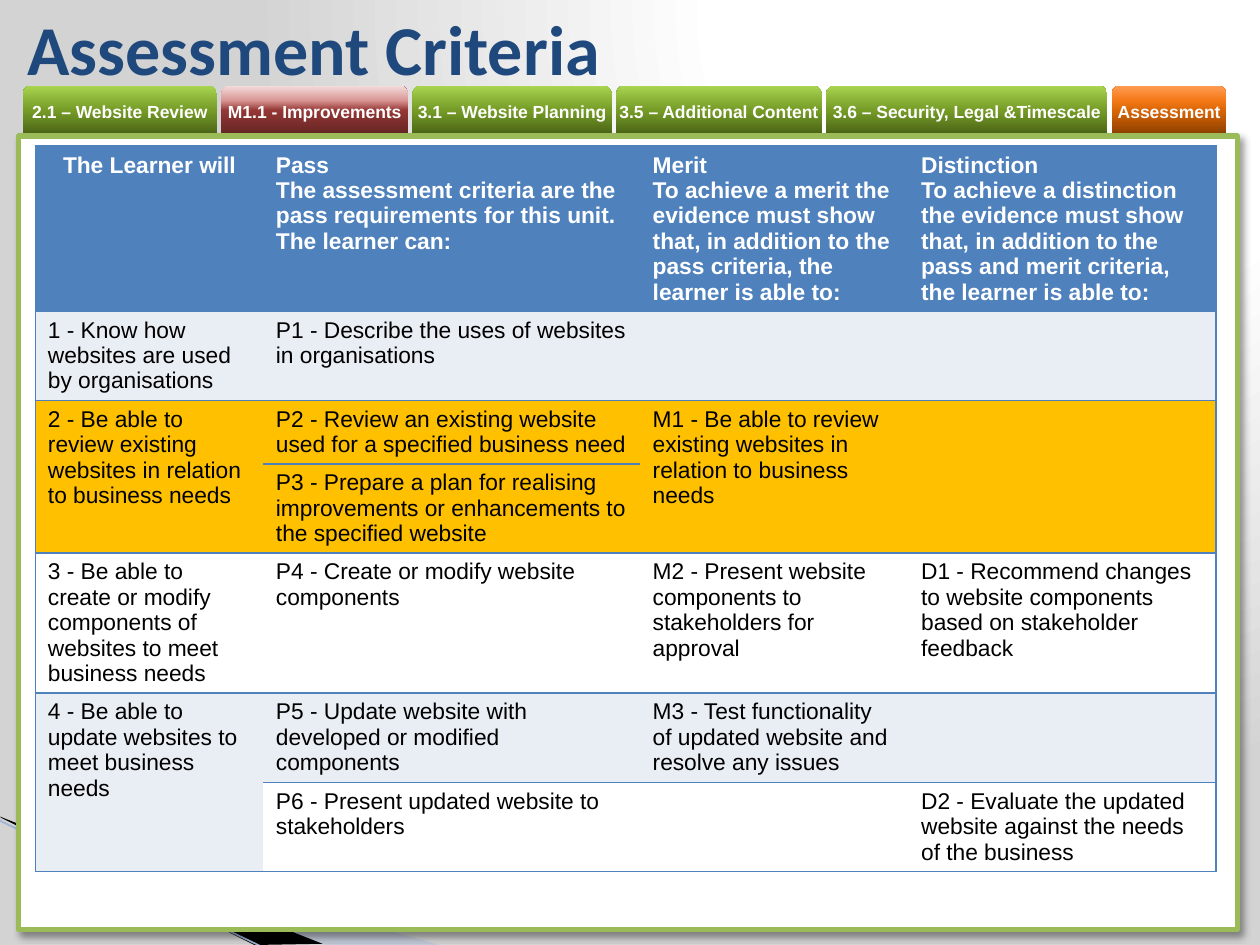
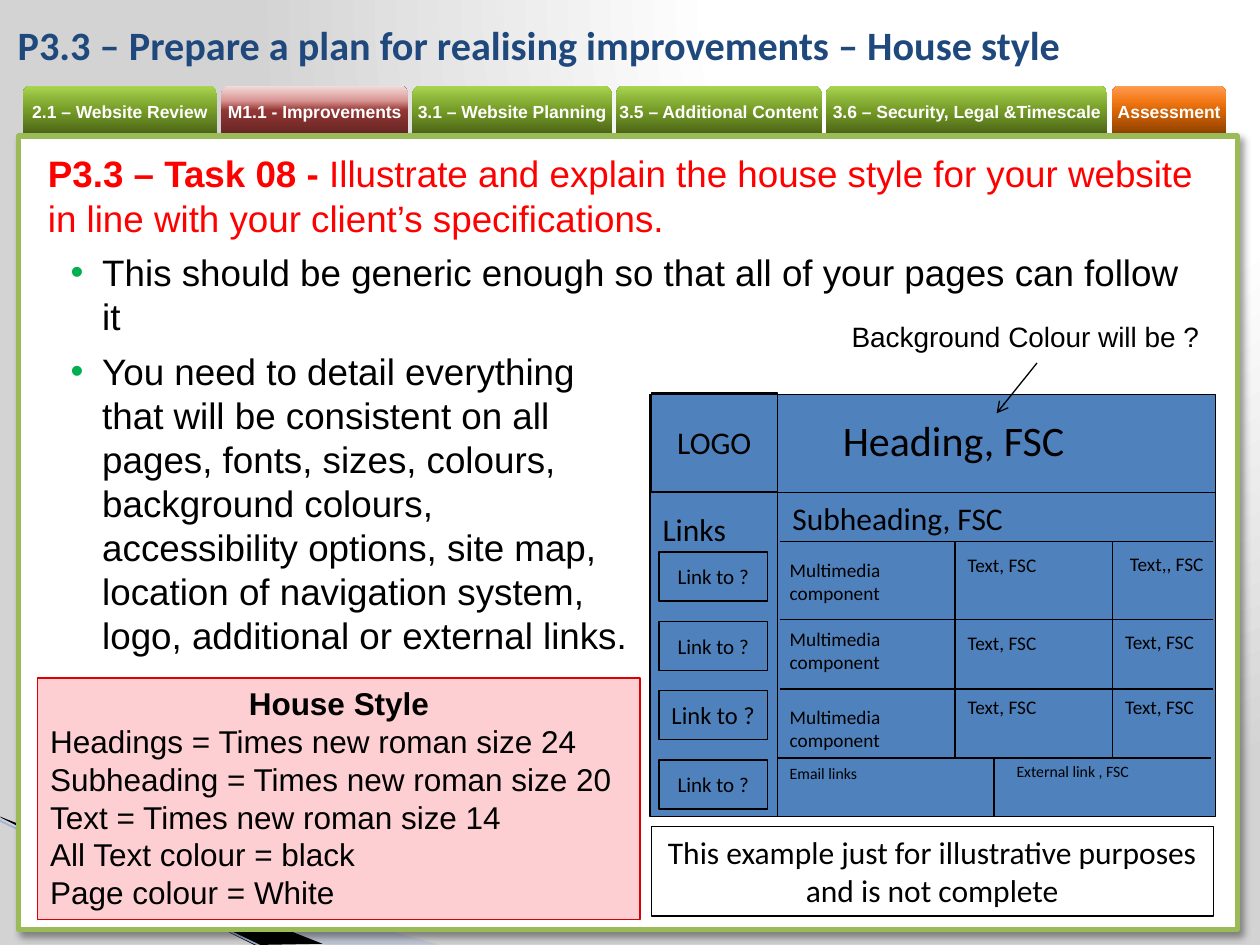
"""Builds the assessment criteria slide and the house style task slide."""
from itertools import accumulate

from pptx import Presentation
from pptx.dml.color import RGBColor
from pptx.enum.shapes import MSO_CONNECTOR as Connector, MSO_SHAPE as Preset
from pptx.enum.text import MSO_ANCHOR as Anchor, MSO_AUTO_SIZE as AutoSize, PP_ALIGN as Align
from pptx.oxml import parse_xml
from pptx.oxml.ns import nsdecls, qn
from pptx.util import Pt

BLUE, NAVY, BLACK, WHITE = "4F81BD", "1F497D", "000000", "FFFFFF"
PALE, AMBER, RED = "E9EDF4", "FFC000", "FF0000"
GREEN_TAB = [(0, "4A6316"), (50, "769C27"), (70, "89B137"), (100, "A9D651")]
RED_TAB = [(0, "632523"), (50, "953735"), (70, "D99694"), (100, "F2DCDB")]
ORANGE_TAB = [(0, "8B3F00"), (50, "DA6606"), (70, "F47917"), (100, "FF9C54")]
BACKDROP = [(0, WHITE), (40, WHITE), (100, "D3D3D3")]
NO_TABLE_STYLE = "{2D5ABB26-0587-4C30-8999-92F81FD0307C}"

TABS = [
    ("2.1 – Website Review", 110.9, GREEN_TAB),
    ("M1.1 - Improvements", 106.6, RED_TAB),
    ("3.1 – Website Planning", 113.8, GREEN_TAB),
    ("3.5 – Additional Content", 117.4, GREEN_TAB),
    ("3.6 – Security, Legal &Timescale", 160.6, GREEN_TAB),
    ("Assessment", 65.5, ORANGE_TAB),
]
TAB_LEFT, TAB_TOP, TAB_HEIGHT, TAB_GAP = 13, 49, 28, 2.6

CRITERIA_HEAD = [
    ["The Learner will"],
    ["Pass", "The assessment criteria are the pass requirements for this unit. The learner can:"],
    ["Merit", "To achieve a merit the",
     "evidence must show that, in addition to the pass criteria, the learner is able to:"],
    ["Distinction", "To achieve a distinction the evidence must show that, in addition to the "
     "pass and merit criteria, the learner is able to:"],
]
CRITERIA = [
    (PALE, 51, ["1 - Know how websites are used by organisations",
                "P1 - Describe the uses of websites in organisations", "", ""]),
    (AMBER, 36, ["2 - Be able to review existing websites in relation to business needs",
                 "P2 - Review an existing website used for a specified business need",
                 "M1 - Be able to review existing websites in relation to business needs", ""]),
    (AMBER, 51, ["", "P3 - Prepare a plan for realising improvements or enhancements "
                 "to the specified website", "", ""]),
    (WHITE, 80, ["3 - Be able to create or modify components of websites to meet business needs",
                 "P4 - Create or modify website components",
                 "M2 - Present website components to stakeholders for approval",
                 "D1 - Recommend changes to website components based on stakeholder feedback"]),
    (PALE, 51, ["4 - Be able to update websites to meet business needs",
                "P5 - Update website with developed or modified components",
                "M3 - Test functionality of updated website and resolve any issues", ""]),
    (WHITE, 51, ["", "P6 - Present updated website to stakeholders", "",
                 "D2 - Evaluate the updated website against the needs of the business"]),
]
CRITERIA_COLUMNS, HEAD_HEIGHT = [130.3, 215.3, 153.4, 175.7], 94
MERGES = [(2, 0), (2, 2), (2, 3), (5, 0)]

TASK = [("P3.3 – Task 08 - ", {"bold": True}),
        ("Illustrate and explain the house style for your website in line with "
         "your client’s specifications.", {})]
TASK_POINTS = [
    "This should be generic enough so that all of your pages can follow it",
    "You need to detail everything\nthat will be consistent on all\npages, fonts, sizes, colours,\n"
    "background colours,\naccessibility options, site map,\nlocation of navigation system,\n"
    "logo, additional or external links.",
]
HOUSE_STYLE = [
    [("House Style", {"bold": True, "align": Align.CENTER})],
    "Headings = Times new roman size 24",
    "Subheading = Times new roman size 20",
    "Text = Times new roman size 14",
    "All Text colour = black",
    "Page colour = White",
]

PAGE_LEFT, NAV_RIGHT, MEDIA_RIGHT, TEXT_RIGHT, PAGE_RIGHT = 371.5, 444.2, 545.8, 635.8, 694.6
PAGE_TOP, HEAD_BOTTOM, GRID_TOP, GRID_BOTTOM, PAGE_BOTTOM = 225.4, 281.5, 309.6, 433.2, 466.6
FOOTER_SPLIT = 568
PAGE_RULES = [
    (PAGE_LEFT, HEAD_BOTTOM, PAGE_RIGHT, HEAD_BOTTOM),
    *((445.7, y, 693.4, y) for y in (GRID_TOP, 354.2, 393.8)),
    (NAV_RIGHT, GRID_BOTTOM, 692, GRID_BOTTOM),
    (NAV_RIGHT, HEAD_BOTTOM, NAV_RIGHT, PAGE_BOTTOM),
    *((x, GRID_TOP, x, GRID_BOTTOM) for x in (MEDIA_RIGHT, TEXT_RIGHT)),
    (FOOTER_SPLIT, GRID_BOTTOM, FOOTER_SPLIT, PAGE_BOTTOM),
]
PAGE_LABELS = [
    ("Links", 18, (PAGE_LEFT, 288, 82, 29)),
    ("Heading, FSC", 24, (474.5, 233.3, 214, 36)),
    ("Subheading, FSC", 18, (445.7, HEAD_BOTTOM, 187, 29)),
    *(("Multimedia component", 11, (NAV_RIGHT, top, 101.5, 34)) for top in (315.4, 355, 399.6)),
    *(("Text, FSC", 11, (MEDIA_RIGHT, top, 90, 21)) for top in (312.5, 357.1, 393.8)),
    ("Text,, FSC", 11, (638.6, 311.8, 68, 21)),
    *(("Text, FSC", 11, (TEXT_RIGHT, top, 68, 21)) for top in (356.4, 393.8)),
    ("Email links", 9, (NAV_RIGHT, 432.7, 120, 29)),
    ("External link , FSC", 9, (573.8, 432, 120, 18)),
]
LINK_SIZES = [12, 12, 14, 12]


def rgb(value):
    """Turn a hex string into a colour."""
    return RGBColor.from_string(value)


def points(lengths):
    """Turn numbers into point lengths."""
    return [Pt(length) for length in lengths]


def drawing(markup):
    """Parse one DrawingML element given without its namespace."""
    tag, rest = markup[1:].split(" ", 1)
    return parse_xml(f"<{tag} {nsdecls('a')} {rest}")


def write(frame, lines, font="Arial", size=18, color=BLACK, bold=False, align=Align.LEFT,
          anchor=Anchor.TOP, wrap=True, inset=None, after=0):
    """Fill a text frame with lines, each a string or a list of (text, format) runs."""
    frame.word_wrap, frame.vertical_anchor = wrap, anchor
    frame.auto_size = AutoSize.NONE
    if inset is not None:
        frame.margin_left = frame.margin_right = frame.margin_top = frame.margin_bottom = Pt(inset)
    for number, line in enumerate(lines):
        paragraph = frame.add_paragraph() if number else frame.paragraphs[0]
        paragraph.alignment = align
        paragraph.space_before, paragraph.space_after = Pt(0), Pt(after)
        for text, special in [(line, {})] if isinstance(line, str) else line:
            paragraph.alignment = special.get("align", align)
            for part_number, part in enumerate(text.split("\n")):
                if part_number:
                    paragraph.add_line_break()
                run = paragraph.add_run()
                run.text = part
                run.font.name, run.font.size = font, Pt(size)
                run.font.bold = special.get("bold", bold)
                run.font.color.rgb = rgb(color)


def paint(shape, fill=None, line=None, width=0.75):
    """Set plain fill and outline, without a shadow."""
    shape.shadow.inherit = False
    if fill:
        shape.fill.solid()
        shape.fill.fore_color.rgb = rgb(fill)
    else:
        shape.fill.background()
    if line:
        shape.line.color.rgb, shape.line.width = rgb(line), Pt(width)
    else:
        shape.line.fill.background()
    return shape


def add_block(slide, box, fill=None, line=None, width=0.75, preset=Preset.RECTANGLE):
    """Add a painted preset shape."""
    return paint(slide.shapes.add_shape(preset, *points(box)), fill, line, width)


def add_label(slide, text, box, **format):
    """Add a text box."""
    write(slide.shapes.add_textbox(*points(box)).text_frame, [text], **format)


def add_rule(slide, ends, color=BLACK, width=0.75):
    """Add a straight line without a shadow."""
    rule = slide.shapes.add_connector(Connector.STRAIGHT, *points(ends))
    rule.line.color.rgb, rule.line.width = rgb(color), Pt(width)
    rule._element.spPr.append(drawing("<a:effectLst />"))
    return rule


def add_wedge(slide, corners, fill):
    """Add a filled outline through the corners."""
    start, *others = [points(corner) for corner in corners]
    builder = slide.shapes.build_freeform(*start)
    builder.add_line_segments(others, close=True)
    return paint(builder.convert_to_shape(), fill)


def shade(fill, owner, stops, direction):
    """Give a fill its gradient stops and direction element."""
    fill.gradient()
    gradient = owner.find(".//" + qn("a:gradFill"))
    for child in list(gradient):
        gradient.remove(child)
    marks = "".join(f'<a:gs pos="{place * 1000}"><a:srgbClr val="{color}"/></a:gs>'
                    for place, color in stops)
    gradient.append(drawing(f"<a:gsLst >{marks}</a:gsLst>"))
    gradient.append(drawing(direction))


def draw_frame(slide):
    """Draw the corner wedges, tabs and content panel."""
    haze = add_wedge(slide, [(-0.7, 468), (251.3, 540), (186.5, 540), (-0.7, 467.3)], "A7B9DB")
    haze._element.find(".//" + qn("a:srgbClr")).append(drawing('<a:alpha val="40000"/>'))
    add_wedge(slide, [(0, 466.6), (184.3, 539.3), (145.4, 540), (0.7, 467.3)], BLACK)
    add_rule(slide, (-0.7, 468.7, 150.5, 541.4), "9EB3D6", 0.95)
    lefts = accumulate((width + TAB_GAP for _, width, _ in TABS), initial=TAB_LEFT)
    for left, (caption, width, stops) in zip(lefts, TABS):
        tab = add_block(slide, (left, TAB_TOP, width, TAB_HEIGHT),
                        preset=Preset.ROUND_2_SAME_RECTANGLE)
        shade(tab.fill, tab._element.spPr, stops, '<a:lin ang="16200000" scaled="0"/>')
        write(tab.text_frame, [caption], size=10, color=WHITE, bold=True, align=Align.CENTER,
              anchor=Anchor.MIDDLE, wrap=False, inset=0)
    panel = add_block(slide, (10.8, 77.8, 696.2, 453.6), WHITE, "9BBB59", 3)
    panel._element.spPr.find(qn("a:effectLst")).append(drawing(
        f'<a:outerShdw blurRad="{Pt(4)}" dist="{Pt(3)}" dir="2700000" algn="tl" rotWithShape="0">'
        '<a:srgbClr val="000000"><a:alpha val="40000"/></a:srgbClr></a:outerShdw>'))


def build_master(deck):
    """Put the backdrop and frame on the slide master, by way of the first slide."""
    master, slide = deck.slide_master, deck.slides[0]
    shade(master.background.fill, master.element.cSld, BACKDROP,
          '<a:path path="circle"><a:fillToRect l="65000" t="0" r="0" b="98000"/></a:path>')
    draw_frame(slide)
    for number, part in enumerate(list(slide.shapes)):
        if not part.is_placeholder:
            part._element.find(".//" + qn("p:cNvPr")).set("id", str(100 + number))
            master.shapes._spTree.append(part._element)


def place(holder, box):
    """Move a placeholder."""
    holder.left, holder.top, holder.width, holder.height = points(box)
    return holder.text_frame


def set_title(slide, text, box, size):
    """Place and write the slide title."""
    write(place(slide.shapes.title, box), [text], font="Calibri", size=size, color=NAVY,
          bold=True, anchor=Anchor.MIDDLE)


def edge(cell, sides):
    """Draw one point borders on the given sides of a cell."""
    for order, side in enumerate(sides):
        cell._tc.get_or_add_tcPr().insert(order, drawing(
            f'<a:ln{side} w="{Pt(1)}"><a:solidFill><a:srgbClr val="{BLUE}"/></a:solidFill></a:ln{side}>'))


def build_criteria(slide):
    """Build the assessment criteria table."""
    set_title(slide, "Assessment Criteria", (8.6, 0, 607, 54.7), 40)
    rows = [(BLUE, HEAD_HEIGHT, CRITERIA_HEAD)] + [
        (fill, height, [[text] if text else [] for text in texts]) for fill, height, texts in CRITERIA]
    heights = [height for _, height, _ in rows]
    box = (20.2, 83.5, sum(CRITERIA_COLUMNS), sum(heights))
    table = slide.shapes.add_table(len(rows), len(CRITERIA_COLUMNS), *points(box)).table
    table._tbl.tblPr.find(qn("a:tableStyleId")).text = NO_TABLE_STYLE
    table.horz_banding = False
    for column, width in zip(table.columns, CRITERIA_COLUMNS):
        column.width = Pt(width)
    for row_number, (fill, height, texts) in enumerate(rows):
        table.rows[row_number].height = Pt(height)
        heading = row_number == 0
        for column_number, lines in enumerate(texts):
            cell = table.cell(row_number, column_number)
            cell.fill.solid()
            cell.fill.fore_color.rgb = rgb(fill)
            edge(cell, {0: "LTB", 3: "RTB"}.get(column_number, "TB"))
            centred = heading and column_number == 0
            write(cell.text_frame, lines, size=13, color=WHITE if heading else BLACK,
                  bold=heading, align=Align.CENTER if centred else Align.LEFT)
    for row_number, column_number in MERGES:
        table.cell(row_number, column_number).merge(table.cell(row_number + 1, column_number))


def build_task(slide):
    """Build the task text, house style box and sample page."""
    set_title(slide, "P3.3 – Prepare a plan for realising improvements – House style",
              (2.9, 3.6, 630.7, 43.2), 23)
    brief = place(slide.placeholders[1], (20.2, 82.8, 674.6, 409))
    write(brief, [TASK, *TASK_POINTS], size=21, after=6)
    for number, paragraph in enumerate(brief.paragraphs):
        properties = paragraph._p.get_or_add_pPr()
        if number:
            paragraph.level = 1
            properties.set("marL", str(Pt(31)))
            properties.set("indent", str(Pt(-18)))
            properties.append(drawing('<a:buClr ><a:srgbClr val="00B050"/></a:buClr>'))
            properties.append(drawing('<a:buFont typeface="Arial"/>'))
            properties.append(drawing('<a:buChar char="•"/>'))
        else:
            properties.set("marL", "0")
            properties.set("indent", "0")
            properties.append(drawing("<a:buNone />"))
            for run in paragraph.runs:
                run.font.color.rgb = rgb(RED)

    write(add_block(slide, (21.6, 387.4, 344.2, 138.2), "FDCFD2", "DE0000").text_frame, HOUSE_STYLE)
    add_block(slide, (PAGE_LEFT, PAGE_TOP, PAGE_RIGHT - PAGE_LEFT, PAGE_BOTTOM - PAGE_TOP), BLUE, BLACK)
    small = {"font": "Calibri", "align": Align.CENTER, "anchor": Anchor.MIDDLE}
    logo = add_block(slide, (372.2, 224.6, 72, 56.2), line=BLACK)
    write(logo.text_frame, ["LOGO"], **small)
    for number, size in enumerate(LINK_SIZES):
        button = add_block(slide, (376.6, 315.4 + 39.6 * number, 61.9, 28.1), BLUE, BLACK)
        write(button.text_frame, ["Link to ?"], size=size, wrap=False, **small)
    for ends in PAGE_RULES:
        add_rule(slide, ends)
    for text, size, box in PAGE_LABELS:
        add_label(slide, text, box, font="Calibri", size=size)
    disclaimer = add_block(slide, (372.2, 472.3, 321.1, 51.1), line=BLACK)
    write(disclaimer.text_frame, ["This example just for illustrative purposes and is not complete"],
          font="Calibri", align=Align.CENTER)
    add_label(slide, "Background Colour will be ?", (479.5, 179.3, 214.6, 26.6), size=16)
    pointer = add_rule(slide, (592.6, 207.4, 569.5, 236.2))
    pointer.line._get_or_add_ln().append(drawing('<a:tailEnd type="arrow"/>'))


def main():
    """Build and save the deck."""
    deck = Presentation()
    deck.slide_width, deck.slide_height = Pt(720), Pt(540)
    criteria = deck.slides.add_slide(deck.slide_layouts[5])
    task = deck.slides.add_slide(deck.slide_layouts[1])
    build_master(deck)
    build_criteria(criteria)
    build_task(task)
    deck.save("out.pptx")


if __name__ == "__main__":
    main()
